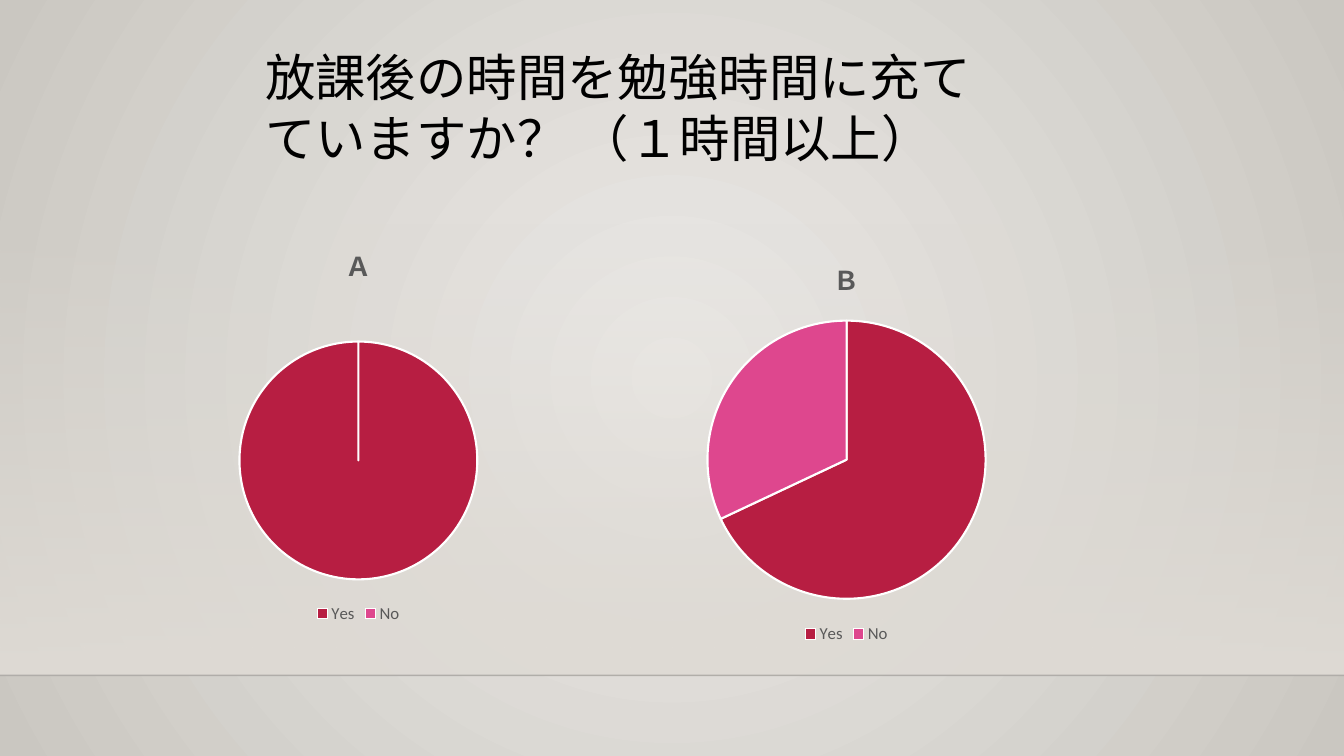
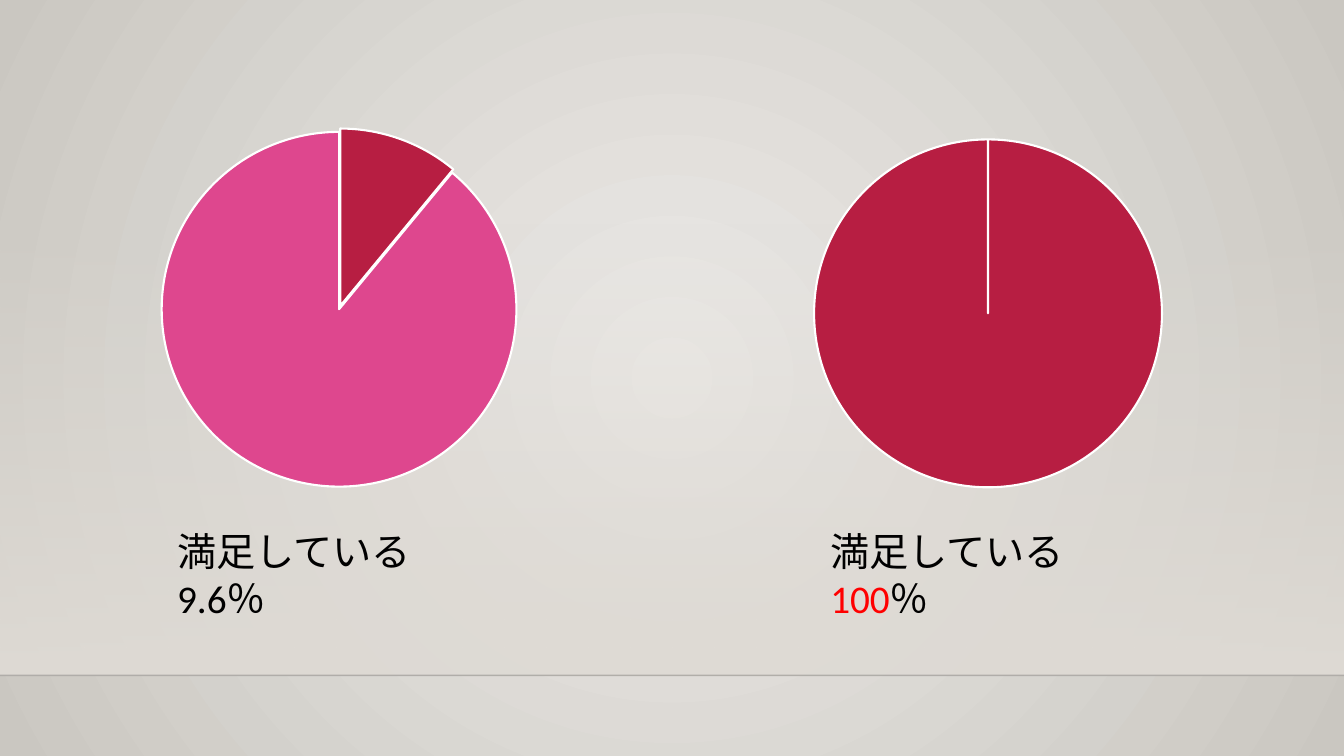
from dataclasses import dataclass

from lxml import etree
from pptx import Presentation
from pptx.chart.data import CategoryChartData
from pptx.dml.color import RGBColor
from pptx.enum.chart import XL_CHART_TYPE, XL_LEGEND_POSITION
from pptx.enum.shapes import MSO_CONNECTOR, MSO_SHAPE
from pptx.enum.text import MSO_ANCHOR, MSO_AUTO_SIZE, PP_ALIGN
from pptx.oxml.ns import qn
from pptx.util import Pt

PIE = XL_CHART_TYPE.PIE
LEGEND_BOTTOM = XL_LEGEND_POSITION.BOTTOM
STRAIGHT = MSO_CONNECTOR.STRAIGHT
RECTANGLE = MSO_SHAPE.RECTANGLE
TOP = MSO_ANCHOR.TOP
NO_AUTOFIT = MSO_AUTO_SIZE.NONE
LEFT = PP_ALIGN.LEFT
TITLE_ONLY, BLANK = 5, 6


@dataclass(frozen=True)
class Theme:
    font: str = "Calibri"
    text: str = "000000"
    highlight: str = "FF0000"
    muted: str = "595959"
    separator: str = "FFFFFF"
    floor_line: str = "000001"
    band: str = "DFDBD5"
    background: tuple = ("ECEAE7", "CAC7C1")
    slices: tuple = ("B71E42", "DE478E", "BC72F0", "795FAF")
    title_size: float = 36
    caption_size: float = 28
    chart_title_size: float = 18.6
    legend_size: float = 12
    chart_size: float = 10


THEME = Theme()


def add_child(parent, tag, **attributes):
    return etree.SubElement(parent, qn(tag), attributes)


def format_font(font, size, color=THEME.text):
    font.name = THEME.font
    font.size = Pt(size)
    font.color.rgb = RGBColor.from_string(color)


def write(paragraph, text, size=THEME.caption_size, color=THEME.text):
    run = paragraph.add_run()
    run.text = text
    format_font(run.font, size, color)


def set_gradient(fill, colors):
    fill.gradient()
    for stop, color in zip(fill.gradient_stops, colors):
        stop.color.rgb = RGBColor.from_string(color)


class Deck:
    def __init__(self, theme, width, height):
        self.theme = theme
        self.width = width
        self.presentation = Presentation()
        self.presentation.slide_width = Pt(width)
        self.presentation.slide_height = Pt(height)
        self.slide = None

    def add_slide(self, layout):
        layouts = self.presentation.slide_layouts
        self.slide = self.presentation.slides.add_slide(layouts[layout])

    def style_master(self, band_top, floor):
        master = self.presentation.slide_master
        set_gradient(master.background.fill, self.theme.background)
        gradient = master.element.xpath(".//p:bgPr/a:gradFill")[0]
        gradient.remove(gradient.find(qn("a:lin")))
        radial = add_child(gradient, "a:path", path="circle")
        add_child(radial, "a:fillToRect", **dict.fromkeys("ltrb", "50000"))

        shapes = self.slide.shapes
        band = shapes.add_shape(RECTANGLE, 0, Pt(band_top), Pt(self.width), Pt(floor - band_top))
        band.shadow.inherit = False
        set_gradient(band.fill, (self.theme.band, self.theme.band))
        band.fill.gradient_angle = 270
        band.line.fill.background()
        add_child(band.element.xpath(".//a:gs/a:srgbClr")[0], "a:alpha", val="0")

        line = shapes.add_connector(STRAIGHT, 0, Pt(floor), Pt(self.width), Pt(floor))
        line.line.width = Pt(1)
        line.line.color.rgb = RGBColor.from_string(self.theme.floor_line)
        add_child(line.element.xpath(".//a:ln//a:srgbClr")[0], "a:alpha", val="20000")
        add_child(line.element.spPr, "a:effectLst")

        for index, shape in enumerate((band, line)):
            shape.element.xpath(".//p:cNvPr")[0].set("id", str(100 + index))
            master.shapes.element.insert(2 + index, shape.element)

    def prepare_text(self, shape):
        frame = shape.text_frame
        frame.word_wrap = True
        frame.auto_size = NO_AUTOFIT
        frame.vertical_anchor = TOP
        frame.paragraphs[0].alignment = LEFT
        return frame.paragraphs[0]

    def add_title(self, text, left, top, width, height):
        title = self.slide.shapes.title
        title.left, title.top = Pt(left), Pt(top)
        title.width, title.height = Pt(width), Pt(height)
        write(self.prepare_text(title), text, size=self.theme.title_size)

    def add_caption(self, label, value, left, top, width, height, color=THEME.text):
        box = self.slide.shapes.add_textbox(Pt(left), Pt(top), Pt(width), Pt(height))
        paragraph = self.prepare_text(box)
        write(paragraph, label)
        paragraph.add_line_break()
        write(paragraph, value, color=color)
        write(paragraph, "％")

    def add_pie(self, name, categories, values, box, plot_span, labelled=False, explosion=0):
        data = CategoryChartData()
        data.categories = categories
        data.add_series(name, values)
        frame = self.slide.shapes.add_chart(PIE, *map(Pt, box), data)
        chart = frame.chart
        format_font(chart.font, self.theme.chart_size)
        chart.has_title = chart.has_legend = labelled
        if labelled:
            write(chart.chart_title.text_frame.paragraphs[0], name,
                  size=self.theme.chart_title_size, color=self.theme.muted)
            chart.legend.position = LEGEND_BOTTOM
            chart.legend.include_in_layout = False
            format_font(chart.legend.font, self.theme.legend_size, self.theme.muted)
        plot = chart.plots[0]
        plot.vary_by_categories = True
        for index in range(len(values)):
            point = plot.series[0].points[index].format
            point.fill.solid()
            point.fill.fore_color.rgb = RGBColor.from_string(self.theme.slices[index])
            point.line.width = Pt(1.5)
            point.line.color.rgb = RGBColor.from_string(self.theme.separator)
        self.place_plot(chart, plot_span)
        if explosion:
            element = etree.Element(qn("c:explosion"), val=str(explosion))
            chart.element.xpath(".//c:ser/c:dPt")[0].addprevious(element)

    def place_plot(self, chart, plot_span):
        area = chart.element.xpath(".//c:plotArea")[0]
        for layout in area.findall(qn("c:layout")):
            area.remove(layout)
        layout = etree.Element(qn("c:layout"))
        area.insert(0, layout)
        manual = add_child(layout, "c:manualLayout")
        add_child(manual, "c:layoutTarget", val="inner")
        for mode in ("xMode", "yMode"):
            add_child(manual, f"c:{mode}", val="edge")
        top, height = plot_span
        for side, value in (("x", 0.2), ("y", top), ("w", 0.6), ("h", height)):
            add_child(manual, f"c:{side}", val=str(value))


def build_study_slide(deck):
    deck.add_title("放課後の時間を勉強時間に充てていますか？ （１時間以上）", 182.2, 29.5, 551.5, 94.3)
    answers = ("Yes", "No")
    deck.add_pie("Ｂ", answers, (68, 32), (339, 170.6, 531.4, 292.3), (0.2, 0.68), labelled=True)
    deck.add_pie("Ａ", answers, (100, 0), (39, 160.5, 434, 288), (0.29, 0.59), labelled=True)


def build_satisfaction_slide(deck):
    name, categories = "Series 1", ("1", "2", "3", "4")
    deck.add_pie(name, categories, (100, None, None, None), (451.5, 36.7, 508.5, 314.6), (0.2, 0.79))
    deck.add_pie(name, categories, (11, 89, None, None), (0, 36.7, 485.3, 324), (0.17, 0.79), explosion=1)
    caption = dict(top=373, width=260, height=76)
    deck.add_caption("満足している", "100", left=586, color=deck.theme.highlight, **caption)
    deck.add_caption("満足している", "9.6", left=119.5, **caption)


def main():
    deck = Deck(THEME, 960, 540)
    deck.add_slide(TITLE_ONLY)
    deck.style_master(band_top=159, floor=482.4)
    build_study_slide(deck)
    deck.add_slide(BLANK)
    build_satisfaction_slide(deck)
    deck.presentation.save("out.pptx")


if __name__ == "__main__":
    main()
